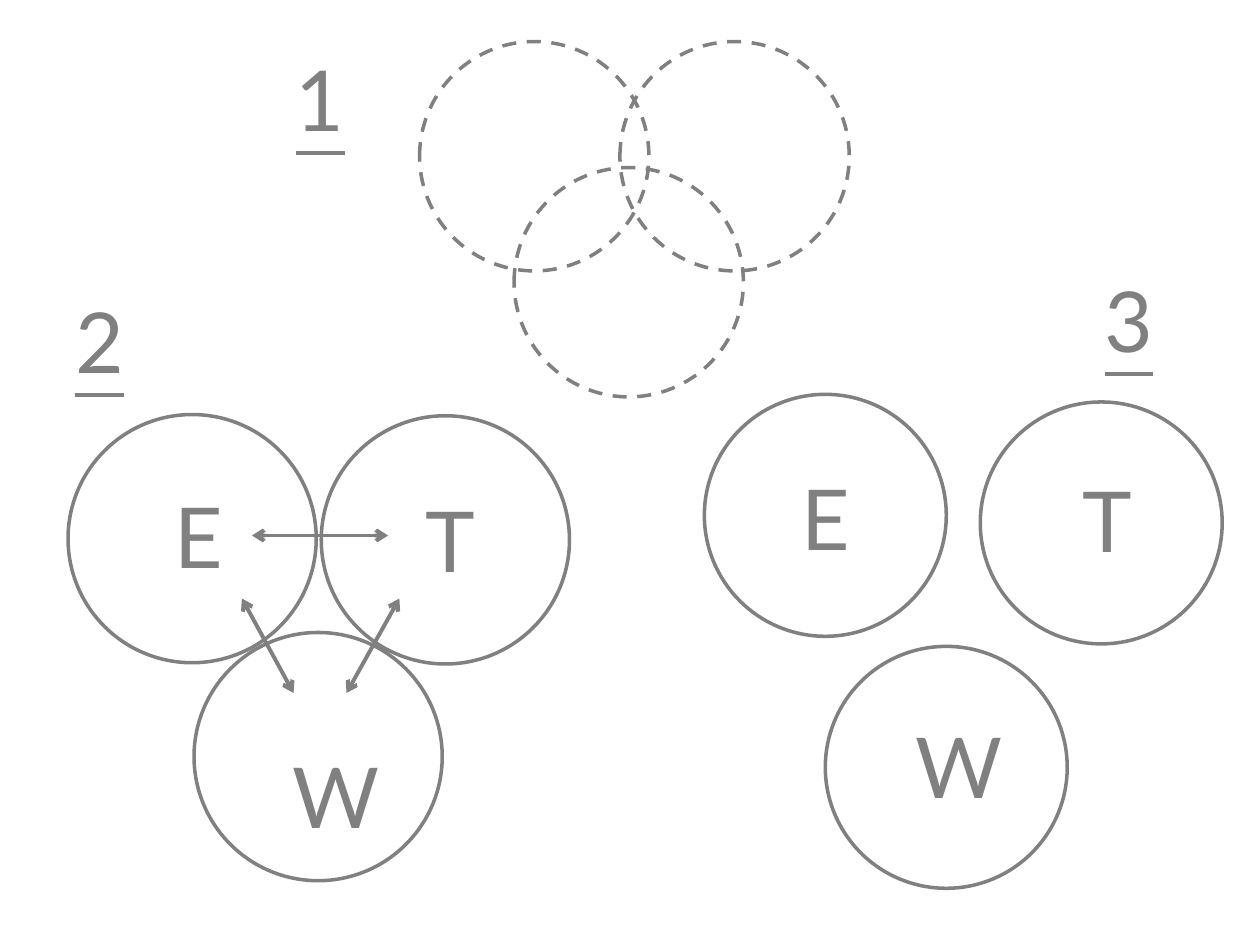
from lxml.etree import SubElement
from pptx import Presentation
from pptx.dml.color import RGBColor as Rgb
from pptx.enum.dml import MSO_LINE as Dash
from pptx.enum.shapes import MSO_CONNECTOR as Link, MSO_SHAPE as Shape
from pptx.enum.text import MSO_AUTO_SIZE as Fit
from pptx.oxml.ns import qn
from pptx.util import Inches, Pt

COLORS = {"gray": "808080"}
FONT = "Lato"

DASHED = [(3.33, 0.33), (4.92, 0.33), (4.08, 1.33)]
JOINED = [
    ("E", (0.54, 3.29), (1.29, 3.8)),
    ("T", (2.55, 3.3), (3.28, 3.83)),
    ("W", (1.54, 5.02), (2.22, 5.86)),
]
APART = [
    ("E", (5.59, 3.13), (6.26, 3.65)),
    ("T", (7.78, 3.19), (8.49, 3.67)),
    ("W", (6.55, 5.13), (7.17, 5.62)),
]
ARROWS = [
    ((2, 4.25), (3.08, 4.25)),
    ((3.17, 4.75), (2.75, 5.5)),
    ((2.33, 5.5), (1.92, 4.75)),
]
STEPS = [("1", (2.25, 0.33)), ("2", (0.5, 2.25)), ("3", (8.67, 2.08))]


def style(line, width):
    line.color.rgb = Rgb.from_string(COLORS["gray"])
    line.width = Pt(width)


def ring(slide, spot, size, dash=None):
    x, y = spot
    shape = slide.shapes.add_shape(
        Shape.FLOWCHART_CONNECTOR, Inches(x), Inches(y), Inches(size), Inches(size)
    )
    shape.shadow.inherit = False
    shape.fill.background()
    style(shape.line, 2)
    if dash:
        shape.line.dash_style = dash


def text(slide, words, spot, width=0.5, size=48, color="gray", under=None):
    x, y = spot
    box = slide.shapes.add_textbox(Inches(x), Inches(y), Inches(width), Inches(0.91))
    frame = box.text_frame
    frame.word_wrap = True
    frame.auto_size = Fit.SHAPE_TO_FIT_TEXT
    run = frame.paragraphs[0].add_run()
    run.text = words
    font = run.font
    font.name = FONT
    font.size = Pt(size)
    font.underline = under
    font.color.rgb = Rgb.from_string(COLORS[color])


def arrow(slide, start, end):
    ends = [Inches(n) for n in (*start, *end)]
    link = slide.shapes.add_connector(Link.STRAIGHT, *ends)
    style(link.line, 2.25)
    line = link.line._get_or_add_ln()
    for tag in ("a:headEnd", "a:tailEnd"):
        SubElement(line, qn(tag), type="arrow")
    SubElement(link._element.spPr, qn("a:effectLst"))


def group(slide, parts, size):
    for name, spot, place in parts:
        ring(slide, spot, size)
        text(slide, name, place)


def main():
    deck = Presentation()
    deck.slide_width, deck.slide_height = Inches(10), Inches(7.5)
    slide = deck.slides.add_slide(deck.slide_layouts[6])
    for spot in DASHED:
        ring(slide, spot, 1.82, dash=Dash.DASH)
    group(slide, JOINED, 1.97)
    group(slide, APART, 1.92)
    for start, end in ARROWS:
        arrow(slide, start, end)
    for step, spot in STEPS:
        text(slide, step, spot, width=0.67, under=True)
    deck.save("out.pptx")


if __name__ == "__main__":
    main()
